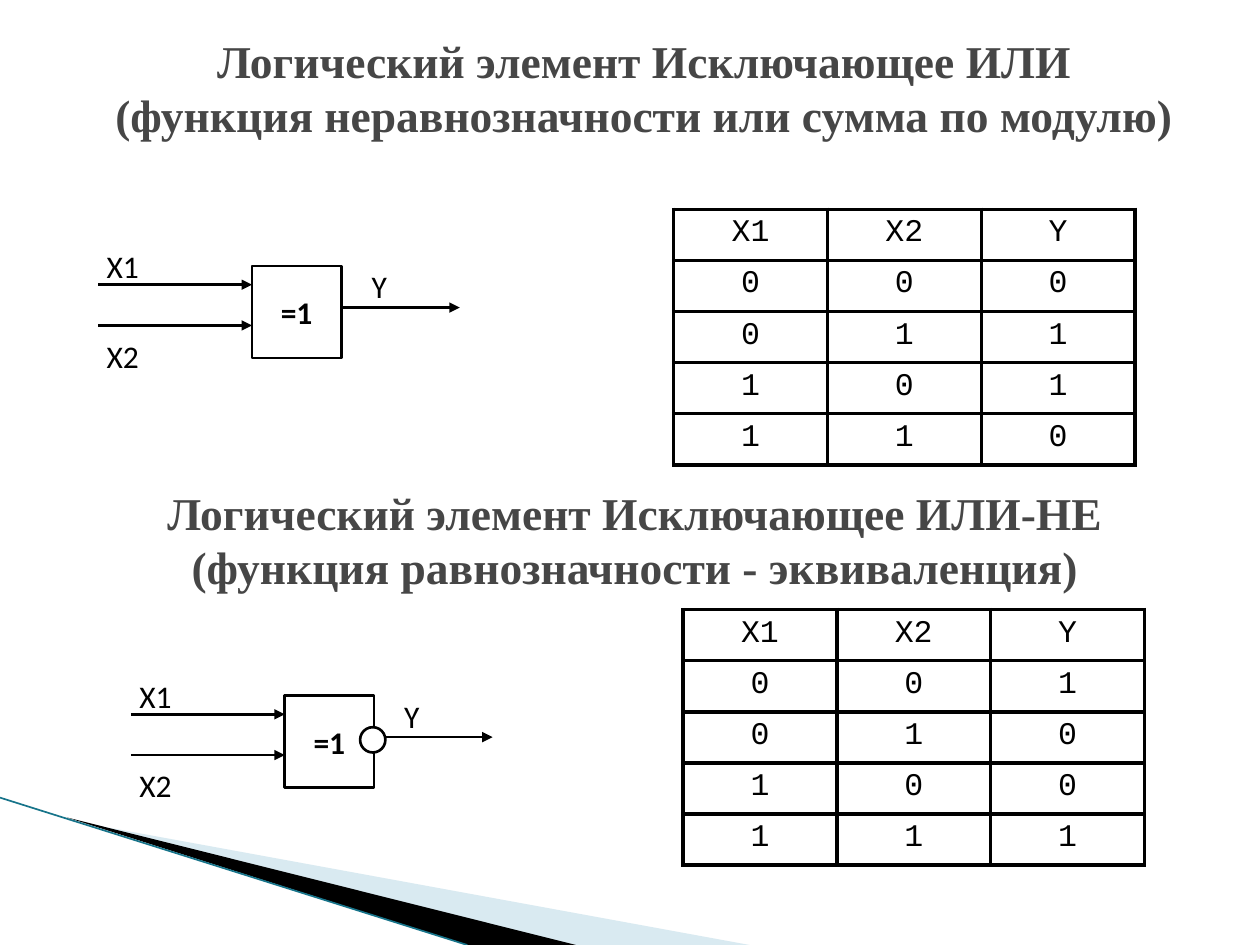
from lxml.etree import SubElement
from pptx import Presentation
from pptx.dml.color import RGBColor
from pptx.enum.shapes import MSO_CONNECTOR, MSO_SHAPE
from pptx.enum.text import MSO_ANCHOR, MSO_AUTO_SIZE, PP_ALIGN
from pptx.oxml.ns import qn
from pptx.util import Cm, Pt

COLORS = {"heading": "464646", "ink": "000000", "paper": "FFFFFF",
          "pale": "A0CBDC", "edge": "17748A"}

INPUT_PAIRS = [("0", "0"), ("0", "1"), ("1", "0"), ("1", "1")]
ELEMENTS = [
    {"heading": "Логический элемент Исключающее ИЛИ\n"
                "(функция неравнозначности или сумма по модулю)",
     "heading_at": (1.09, 0.53, 23.8, 2.49), "outputs": "0110",
     "table_at": (13.58, 4.22), "gate_at": (5.08, 5.36), "inverted": False},
    {"heading": "Логический элемент Исключающее ИЛИ-НЕ\n"
                "(функция равнозначности - эквиваленция)",
     "heading_at": (1.91, 9.65, 21.79, 2.49), "outputs": "1001",
     "table_at": (13.77, 12.29), "gate_at": (5.74, 14.02), "inverted": True},
]

# Gate parts, in cm from the gate's top left corner
GATE_SIZE = (1.8, 1.86)
WIRES = [(-3.1, 0.38, 0, 0.38), (-3.1, 1.2, 0, 1.2), (1.8, 0.84, 4.19, 0.84)]
PINS = [("X1", -3.18, -0.5), ("X2", -3.18, 1.3), ("Y", 2.16, -0.1)]
INVERTER = (1.52, 0.64, 0.51)
COLUMN_WIDTH, ROW_HEIGHT = 3.1, 1.03

SWOOSHES = [
    ("pale", 40, [(1.4, 16.54), (15.11, 19.05), (11.58, 19.05)]),
    ("ink", 100, [(1.35, 16.48), (11.61, 19.05), (9.42, 19.05)]),
]
SWOOSH_EDGE = (0, 16.08, 9.42, 19.05)


def rgb(name):
    """Return the named colour."""
    return RGBColor.from_string(COLORS[name])


def write(frame, text, font, size, color="ink", bold=False, align=PP_ALIGN.LEFT):
    """Fill a text frame and format its runs."""
    frame.text = text
    for paragraph in frame.paragraphs:
        paragraph.alignment = align
        for run in paragraph.runs:
            run.font.name, run.font.size, run.font.bold = font, Pt(size), bold
            run.font.color.rgb = rgb(color)


def add_line(slide, ends, color, width, arrow=False):
    """Draw a straight line, with an arrowhead if asked."""
    line = slide.shapes.add_connector(MSO_CONNECTOR.STRAIGHT, *map(Cm, ends))
    line.line.color.rgb, line.line.width = rgb(color), Pt(width)
    if arrow:
        SubElement(line.line._get_or_add_ln(), qn("a:tailEnd"), type="triangle")
    SubElement(line._element.spPr, qn("a:effectLst"))


def add_outlined(slide, preset, left, top, width, height):
    """Add a white preset shape with a black outline."""
    shape = slide.shapes.add_shape(preset, Cm(left), Cm(top), Cm(width), Cm(height))
    shape.shadow.inherit = False
    shape.fill.solid()
    shape.fill.fore_color.rgb = rgb("paper")
    shape.line.color.rgb, shape.line.width = rgb("ink"), Pt(1.5)
    return shape


def add_swoosh(slide, color, opacity, corners):
    """Draw one filled corner wedge."""
    start, *others = [(Cm(x), Cm(y)) for x, y in corners]
    builder = slide.shapes.build_freeform(*start)
    builder.add_line_segments(others, close=True)
    wedge = builder.convert_to_shape()
    wedge.shadow.inherit = False
    wedge.line.fill.background()
    wedge.fill.solid()
    wedge.fill.fore_color.rgb = rgb(color)
    if opacity < 100:
        swatch = wedge._element.spPr.find(qn("a:solidFill"))[0]
        SubElement(swatch, qn("a:alpha"), val=str(opacity * 1000))


def add_heading(heading, text, place):
    """Place and write a two-line heading."""
    heading.left, heading.top, heading.width, heading.height = map(Cm, place)
    frame = heading.text_frame
    frame.word_wrap, frame.auto_size = True, MSO_AUTO_SIZE.NONE
    frame.vertical_anchor = MSO_ANCHOR.TOP
    write(frame, text, "Times New Roman", 26, "heading", True, PP_ALIGN.CENTER)


def add_truth_table(slide, left, top, outputs):
    """Add the truth table for the given outputs."""
    rows = [("X1", "X2", "Y")] + [(*pair, y) for pair, y in zip(INPUT_PAIRS, outputs)]
    table = slide.shapes.add_table(
        len(rows), 3, Cm(left), Cm(top),
        Cm(3 * COLUMN_WIDTH), Cm(len(rows) * ROW_HEIGHT)).table
    table.first_row = table.horz_banding = False
    for row, values in zip(table.rows, rows):
        for cell, value in zip(row.cells, values):
            write(cell.text_frame, value, "Courier New", 18, align=PP_ALIGN.CENTER)
            properties = cell._tc.get_or_add_tcPr()
            for side in ("lnL", "lnR", "lnT", "lnB"):
                border = SubElement(properties, qn(f"a:{side}"), w=str(Pt(2.25)))
                paint = SubElement(border, qn("a:solidFill"))
                SubElement(paint, qn("a:srgbClr"), val=COLORS["ink"])
            cell.fill.background()


def add_gate(slide, left, top, inverted):
    """Draw a gate with its wires and pin names."""
    body = add_outlined(slide, MSO_SHAPE.RECTANGLE, left, top, *GATE_SIZE)
    body.text_frame.word_wrap = False
    body.text_frame.vertical_anchor = MSO_ANCHOR.MIDDLE
    write(body.text_frame, "=1", "Calibri", 18, bold=True, align=PP_ALIGN.CENTER)
    for x1, y1, x2, y2 in WIRES:
        add_line(slide, (left + x1, top + y1, left + x2, top + y2), "ink", 1.5, True)
    for name, x, y in PINS:
        pin = slide.shapes.add_textbox(Cm(left + x), Cm(top + y), Cm(1.57), Cm(1.02))
        pin.text_frame.word_wrap = True
        write(pin.text_frame, name, "Calibri", 18)
    if inverted:
        x, y, size = INVERTER
        add_outlined(slide, MSO_SHAPE.OVAL, left + x, top + y, size, size)


def main():
    """Build the slide on two logic elements."""
    deck = Presentation()
    deck.slide_width, deck.slide_height = Cm(25.4), Cm(19.05)
    slide = deck.slides.add_slide(deck.slide_layouts[5])
    for swoosh in SWOOSHES:
        add_swoosh(slide, *swoosh)
    add_line(slide, SWOOSH_EDGE, "edge", 0.95)
    for index, element in enumerate(ELEMENTS):
        place = element["heading_at"]
        heading = slide.shapes.add_textbox(*map(Cm, place)) if index else slide.shapes.title
        add_heading(heading, element["heading"], place)
        add_truth_table(slide, *element["table_at"], element["outputs"])
        add_gate(slide, *element["gate_at"], element["inverted"])
    deck.save("out.pptx")


if __name__ == "__main__":
    main()
